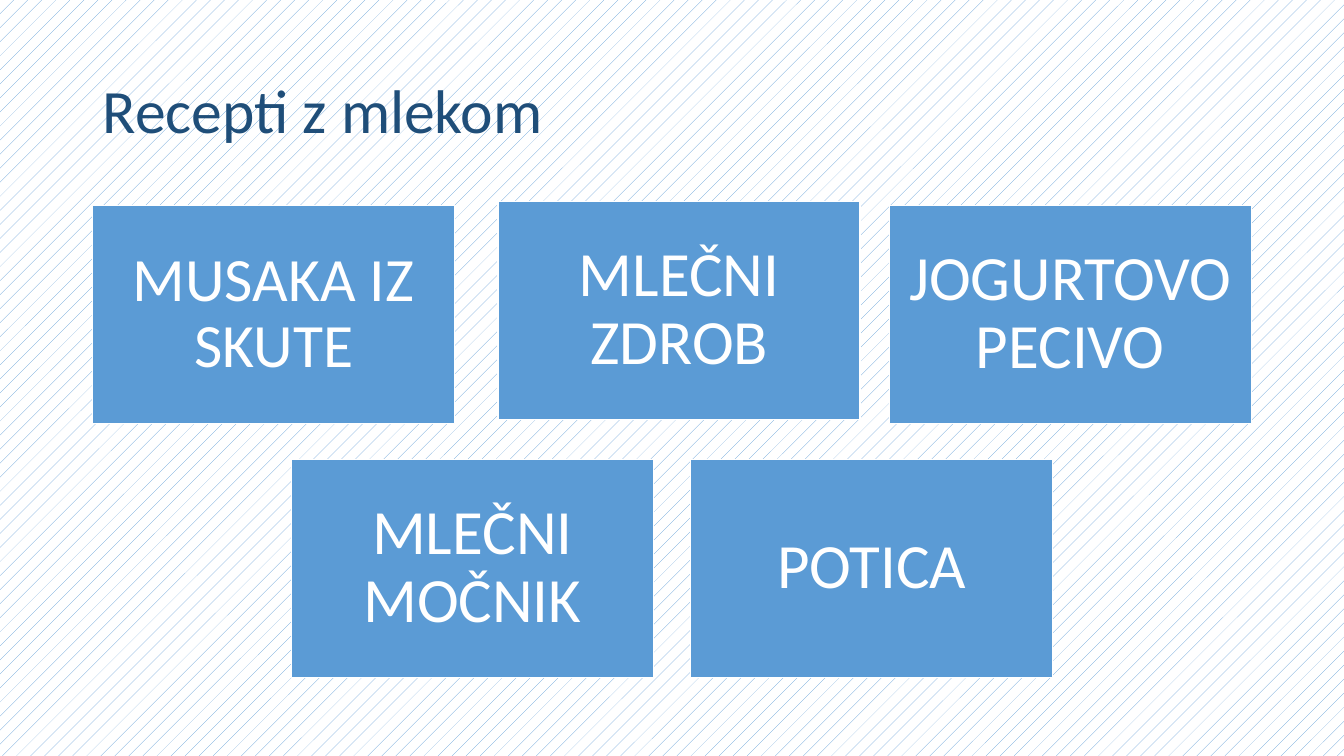
from pptx import Presentation
from pptx import util as u
from pptx.dml.color import RGBColor
from pptx.enum import dml, shapes, text

FONT = "Calibri"
BLUE, NAVY, WHITE = "5B9BD5", "1F4E79", "FFFFFF"
CARD_WIDTH, CARD_HEIGHT = 3.59, 2.16

# Recipe name, left, top, text size, inset
RECIPES = [
    ("MUSAKA IZ SKUTE", 0.92, 2.04, 44, 0.18),
    ("MLEČNI ZDROB", 4.94, 2, 45, 0.19),
    ("JOGURTOVO PECIVO", 8.82, 2.04, 45, 0.19),
    ("MLEČNI MOČNIK", 2.89, 4.56, 45, 0.19),
    ("POTICA", 6.85, 4.56, 45, 0.19),
]


def color(value):
    return RGBColor.from_string(value)


def place(box, left, top, width, height):
    box.left, box.top = u.Inches(left), u.Inches(top)
    box.width, box.height = u.Inches(width), u.Inches(height)


def write(box, words, *, size, fill, align, inset_x=0.1, inset_y=0.05):
    frame = box.text_frame
    frame.word_wrap = True
    frame.auto_size = text.MSO_AUTO_SIZE.NONE
    frame.vertical_anchor = text.MSO_ANCHOR.MIDDLE
    frame.margin_left = frame.margin_right = u.Inches(inset_x)
    frame.margin_top = frame.margin_bottom = u.Inches(inset_y)
    para = frame.paragraphs[0]
    para.alignment = align
    para.line_spacing = 0.9
    para.space_before = u.Pt(0)
    span = para.add_run()
    span.text = words
    span.font.name = FONT
    span.font.size = u.Pt(size)
    span.font.color.rgb = color(fill)


def set_background(page):
    fill = page.background.fill
    fill.patterned()
    fill.pattern = dml.MSO_PATTERN.PERCENT_5
    fill.fore_color.rgb = color(BLUE)
    fill.back_color.rgb = color(WHITE)


def add_title(page, words):
    title = page.shapes.title
    place(title, 0.92, 0.4, 11.5, 1.45)
    write(title, words, size=44, fill=NAVY, align=text.PP_ALIGN.LEFT)


def add_recipe(page, name, left, top, size, inset):
    card = page.shapes.add_shape(
        shapes.MSO_SHAPE.RECTANGLE, u.Inches(left), u.Inches(top),
        u.Inches(CARD_WIDTH), u.Inches(CARD_HEIGHT))
    card.shadow.inherit = False
    card.fill.solid()
    card.fill.fore_color.rgb = color(BLUE)
    card.line.color.rgb = color(WHITE)
    card.line.width = u.Pt(1)
    write(card, name, size=size, fill=WHITE, align=text.PP_ALIGN.CENTER,
          inset_x=inset, inset_y=inset)


def main():
    deck = Presentation()
    deck.slide_width, deck.slide_height = u.Inches(13.33), u.Inches(7.5)
    page = deck.slides.add_slide(deck.slide_layouts[5])

    # Background and title
    set_background(page)
    add_title(page, "Recepti z mlekom")

    # Recipe cards
    for recipe in RECIPES:
        add_recipe(page, *recipe)

    deck.save("out.pptx")


if __name__ == "__main__":
    main()
